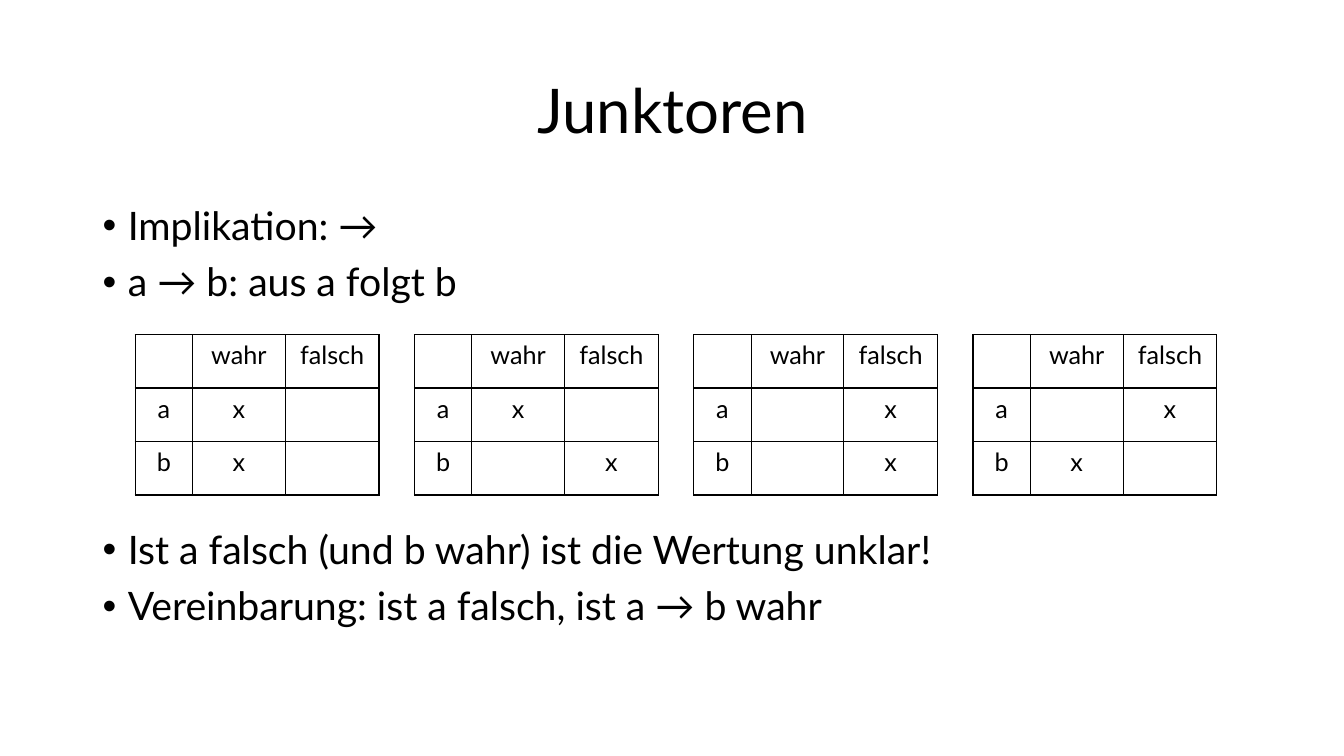
from lxml import etree
from pptx import Presentation
from pptx.dml.color import RGBColor
from pptx.enum.text import MSO_ANCHOR, PP_ALIGN
from pptx.oxml.ns import qn
from pptx.util import Inches, Pt

CENTER, LEFT = PP_ALIGN.CENTER, PP_ALIGN.LEFT
MIDDLE, TOP = MSO_ANCHOR.MIDDLE, MSO_ANCHOR.TOP


def color(hex_string):
    return RGBColor.from_string(hex_string)


class SlideBuilder:
    font = "Lato"
    ink = "000000"
    title_size, body_size, table_size = 44, 28, 18
    line_spacing = 0.9
    paragraph_gap = 10
    bullet_indent = 0.25

    def __init__(self, slide):
        self.slide = slide

    def format_paragraph(self, paragraph, size, alignment):
        paragraph.alignment = alignment
        for run in paragraph.runs:
            run.font.name = self.font
            run.font.size = Pt(size)
            run.font.color.rgb = color(self.ink)

    def text_box(self, left, top, width, height, anchor):
        shape = self.slide.shapes.add_textbox(
            Inches(left), Inches(top), Inches(width), Inches(height))
        shape.text_frame.word_wrap = True
        shape.text_frame.vertical_anchor = anchor
        return shape.text_frame

    def title(self, text, *box):
        text_frame = self.text_box(*box, MIDDLE)
        text_frame.text = text
        paragraph = text_frame.paragraphs[0]
        paragraph.line_spacing = self.line_spacing
        self.format_paragraph(paragraph, self.title_size, CENTER)

    def bullets(self, groups, group_gap, *box):
        """Bulleted lines; group_gap is the space in points before a new group."""
        text_frame = self.text_box(*box, TOP)
        text_frame.text = "\n".join(line for group in groups for line in group)
        group_starts = {len(groups[0])}
        for index, paragraph in enumerate(text_frame.paragraphs):
            paragraph.line_spacing = self.line_spacing
            paragraph.space_before = Pt(
                group_gap if index in group_starts else self.paragraph_gap)
            self.format_paragraph(paragraph, self.body_size, LEFT)
            properties = paragraph._p.get_or_add_pPr()
            properties.set("marL", str(Inches(self.bullet_indent)))
            properties.set("indent", str(-Inches(self.bullet_indent)))
            etree.SubElement(properties, qn("a:buFont"), typeface="Arial")
            etree.SubElement(properties, qn("a:buChar"), char="•")

    def cell_borders(self, cell):
        properties = cell._tc.get_or_add_tcPr()
        for side in ("lnL", "lnR", "lnT", "lnB"):
            line = etree.SubElement(properties, qn("a:" + side), w=str(Pt(1)))
            fill = etree.SubElement(line, qn("a:solidFill"))
            etree.SubElement(fill, qn("a:srgbClr"), val=self.ink)

    def table(self, rows, left, top, column_widths, row_height):
        shape = self.slide.shapes.add_table(
            len(rows), len(column_widths), Inches(left), Inches(top),
            Inches(sum(column_widths)), Inches(row_height * len(rows)))
        table = shape.table
        table.first_row = table.horz_banding = False
        for column, width in zip(table.columns, column_widths):
            column.width = Inches(width)
        for row_index, row in enumerate(rows):
            table.rows[row_index].height = Inches(row_height)
            for column_index, text in enumerate(row):
                cell = table.cell(row_index, column_index)
                cell.text = text
                self.format_paragraph(
                    cell.text_frame.paragraphs[0], self.table_size, CENTER)
                self.cell_borders(cell)
                cell.fill.background()


def truth_rows(a, b):
    """Header plus one row per variable, with the x under its truth value."""
    rows = [("", "wahr", "falsch")]
    for name, value in (("a", a), ("b", b)):
        rows.append((name, "x" if value else "", "" if value else "x"))
    return rows


def main():
    presentation = Presentation()
    presentation.slide_width = Inches(13.33)
    presentation.slide_height = Inches(7.5)
    builder = SlideBuilder(
        presentation.slides.add_slide(presentation.slide_layouts[6]))

    # Title and bullets, with room for the tables between the two groups
    builder.title("Junktoren", 0.92, 0.4, 11.5, 1.45)
    builder.bullets(
        [["Implikation: →", "a → b: aus a folgt b"],
         ["Ist a falsch (und b wahr) ist die Wertung unklar!",
          "Vereinbarung: ist a falsch, ist a → b wahr"]],
        161, 0.92, 2, 11.5, 4.76)

    # One table per assignment of a and b
    assignments = [(True, True), (True, False), (False, False), (False, True)]
    for index, (a, b) in enumerate(assignments):
        builder.table(truth_rows(a, b), 1.34 + 2.77 * index, 3.32,
                      (0.57, 0.92, 0.93), 0.53)

    presentation.save("out.pptx")


if __name__ == "__main__":
    main()
